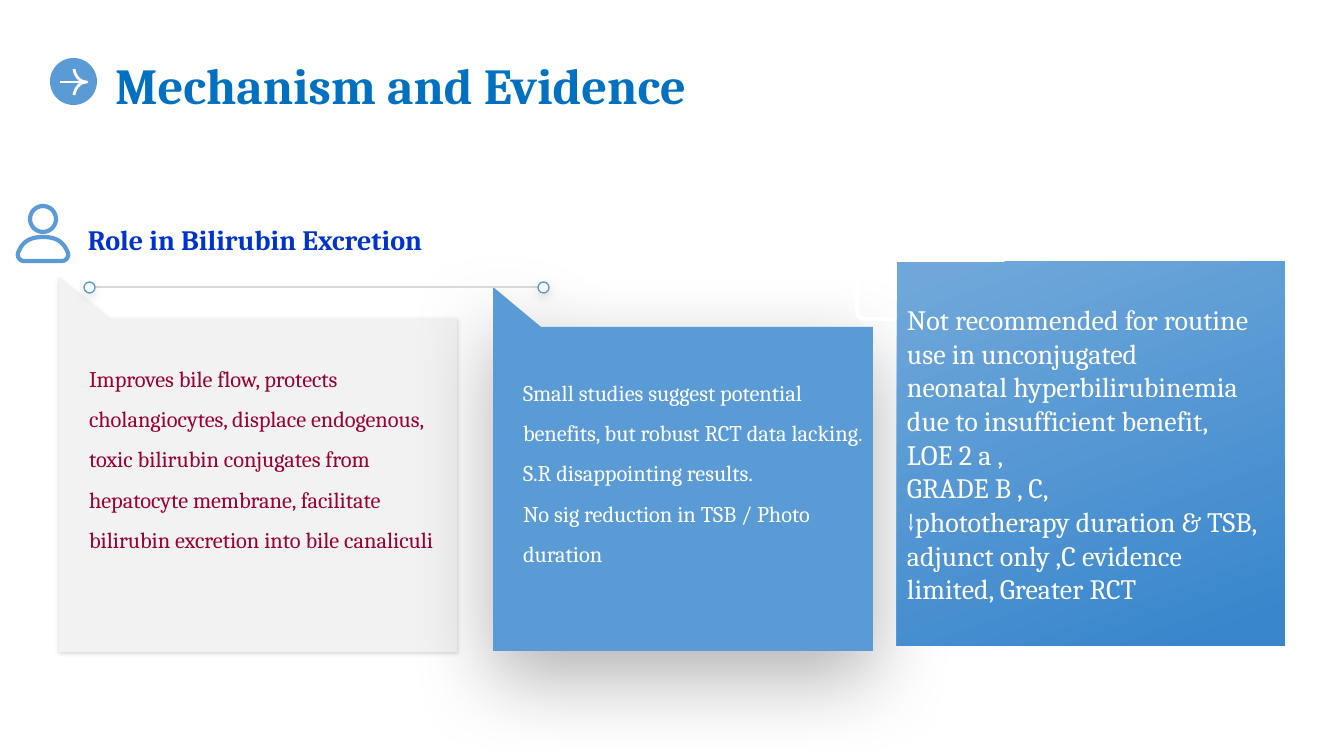
"""Build the slide on mechanism and evidence of bilirubin excretion."""
from lxml.etree import SubElement
from pptx import Presentation
from pptx.dml.color import RGBColor
from pptx.enum.shapes import MSO_CONNECTOR as CONNECTOR, MSO_SHAPE as SHAPE
from pptx.enum.text import MSO_ANCHOR as ANCHOR, MSO_AUTO_SIZE as AUTO_SIZE, PP_ALIGN as ALIGN
from pptx.oxml.ns import qn
from pptx.util import Pt

EMU_PER_PX = 914400 / 100.8
BLUE, WHITE = "5B9BD5", "FFFFFF"


def px(*lengths):
    return [round(length * EMU_PER_PX) for length in lengths]


def paint(shape, fill=None, line=None, width=1, shadow=None):
    shape.shadow.inherit = False
    if fill:
        shape.fill.solid()
        shape.fill.fore_color.rgb = RGBColor.from_string(fill)
    else:
        shape.fill.background()
    if line:
        shape.line.color.rgb = RGBColor.from_string(line)
        shape.line.width = Pt(width)
    else:
        shape.line.fill.background()
    if shadow:
        opacity, blur, distance = shadow
        effects = shape._element.spPr.find(qn("a:effectLst"))
        outer = SubElement(effects, qn("a:outerShdw"), blurRad=str(Pt(blur)),
                           dist=str(Pt(distance)), dir="5400000", algn="t", rotWithShape="0")
        color = SubElement(outer, qn("a:srgbClr"), val="000000")
        SubElement(color, qn("a:alpha"), val=str(opacity * 1000))


presentation = Presentation()
presentation.slide_width, presentation.slide_height = px(1344, 756)
slide = presentation.slides.add_slide(presentation.slide_layouts[5])
shapes = slide.shapes

panels = []
for left, top, shoulder, notch_right, right, bottom, fill, shadow in [
    (59, 277, 318, 110, 457, 652, "F2F2F2", (15, 3, 1)),
    (493, 287, 327, 541, 873, 651, BLUE, (30, 60, 20)),
]:
    corners = [(notch_right, shoulder), (right, shoulder), (right, bottom), (left, bottom)]
    builder = shapes.build_freeform(*px(left, top), scale=1)
    builder.add_line_segments([px(*corner) for corner in corners], close=True)
    panel = builder.convert_to_shape()
    paint(panel, fill, shadow=shadow)
    panels.append(panel)

rule = shapes.add_connector(CONNECTOR.STRAIGHT, *px(95, 287, 548, 287))
badge = shapes.add_shape(SHAPE.OVAL, *px(50, 58, 47, 47))
paint(badge, BLUE)
arrow_shaft = shapes.add_connector(CONNECTOR.STRAIGHT, *px(60, 82, 87, 82))
for connector, color, width in [(rule, "D9D9D9", 0.82), (arrow_shaft, WHITE, 2)]:
    connector.line.color.rgb = RGBColor.from_string(color)
    connector.line.width = Pt(width)
    SubElement(connector._element.spPr, qn("a:effectLst"))

for left in (84, 538):
    paint(shapes.add_shape(SHAPE.OVAL, *px(left, 282, 11, 11)), WHITE, BLUE, 1, (11, 7, 3))

paint(shapes.add_shape(SHAPE.OVAL, *px(30, 206, 26, 26)), None, BLUE, 3)

person_body = [
    [(43, 237), (28, 237), (22, 243), (18, 253)],
    [(18, 253), (17, 257), (20, 261), (24, 261)],
    [(62, 261), (66, 261), (69, 257), (68, 253)],
    [(68, 253), (64, 243), (58, 237), (43, 237)],
]
arrow_head = [
    [(74, 69), (75, 75), (79, 82), (87, 82)],
    [(87, 82), (79, 82), (75, 89), (74, 95)],
]
for curves, color, width, closed in [(person_body, BLUE, 3, True), (arrow_head, WHITE, 2, False)]:
    points = []
    for curve in curves:
        for step in range(13):
            t = step / 12
            weights = ((1 - t) ** 3, 3 * t * (1 - t) ** 2, 3 * t * t * (1 - t), t ** 3)
            points.append(px(*(sum(w * value for w, value in zip(weights, axis))
                               for axis in zip(*curve))))
    builder = shapes.build_freeform(*points[0], scale=1)
    builder.add_line_segments(points[1:], close=closed)
    paint(builder.convert_to_shape(), None, color, width)

paint(shapes.add_shape(SHAPE.ROUNDED_RECTANGLE, *px(857, 264, 47, 55)), None, WHITE, 3)

heading = shapes.add_textbox(*px(88, 129, 1041, 127))
card = shapes.add_shape(SHAPE.RECTANGLE, *px(897, 262, 388, 384))
paint(card, BLUE)
card.fill.gradient()
card.fill.gradient_angle = 290
for stop, (position, color) in zip(card.fill.gradient_stops, [(0.04, "6FA7DA"), (0.95, "3986CC")]):
    stop.position = position
    stop.color.rgb = RGBColor.from_string(color)

title = shapes.title
title.left, title.top, title.width, title.height = px(115, 58, 1154, 47)

improves = [[("Improves bile flow, protects cholangiocytes, displace endogenous, toxic bilirubin "
              "conjugates from hepatocyte membrane, facilitate bilirubin excretion into "
              "bile canaliculi", 16)]]
studies = [
    [("Small studies suggest potential benefits, but robust RCT data lacking", 16), (".", 14)],
    [("S.R disappointing results.", 16)],
    [("No sig reduction in TSB / Photo duration", 16)],
]
recommendation = [
    [("Not recommended for routine use in unconjugated", 20)],
    [("neonatal hyperbilirubinemia due to insufficient benefit,", 20)],
    [("LOE 2 a ,", 20)],
    [("GRADE B , C,", 20)],
    [("↓phototherapy duration & TSB, adjunct only ,C evidence limited, Greater RCT", 20)],
]
for shape, paragraphs, color, bold, anchor, spacing, margins in [
    (title, [[("Mechanism and Evidence", 36)]], "0070C0", True, ANCHOR.MIDDLE, 1.1, (0, 0, 0, 0)),
    (heading, [[("Role in Bilirubin Excretion", 20)]], "0033CC", True, ANCHOR.BOTTOM, 1.5,
     (0, 0, 0, 0)),
    (panels[0], improves, "990033", False, ANCHOR.BOTTOM, 1.5, (30, 0, 10, 99)),
    (panels[1], studies, WHITE, False, ANCHOR.BOTTOM, 1.5, (30, 0, 10, 84)),
    (card, recommendation, WHITE, False, ANCHOR.MIDDLE, 1.0, (10, 5, 14, 5)),
]:
    frame = shape.text_frame
    left, top, right, bottom = px(*margins)
    settings = {"word_wrap": True, "auto_size": AUTO_SIZE.NONE, "vertical_anchor": anchor,
                "margin_left": left, "margin_top": top,
                "margin_right": right, "margin_bottom": bottom}
    for name, value in settings.items():
        setattr(frame, name, value)
    for index, runs in enumerate(paragraphs):
        paragraph = frame.add_paragraph() if index else frame.paragraphs[0]
        paragraph.alignment = ALIGN.LEFT
        paragraph.line_spacing = spacing
        for text, size in runs:
            run = paragraph.add_run()
            run.text = text
            for name, value in {"name": "Cambria", "size": Pt(size), "bold": bold}.items():
                setattr(run.font, name, value)
            run.font.color.rgb = RGBColor.from_string(color)

presentation.save("out.pptx")
